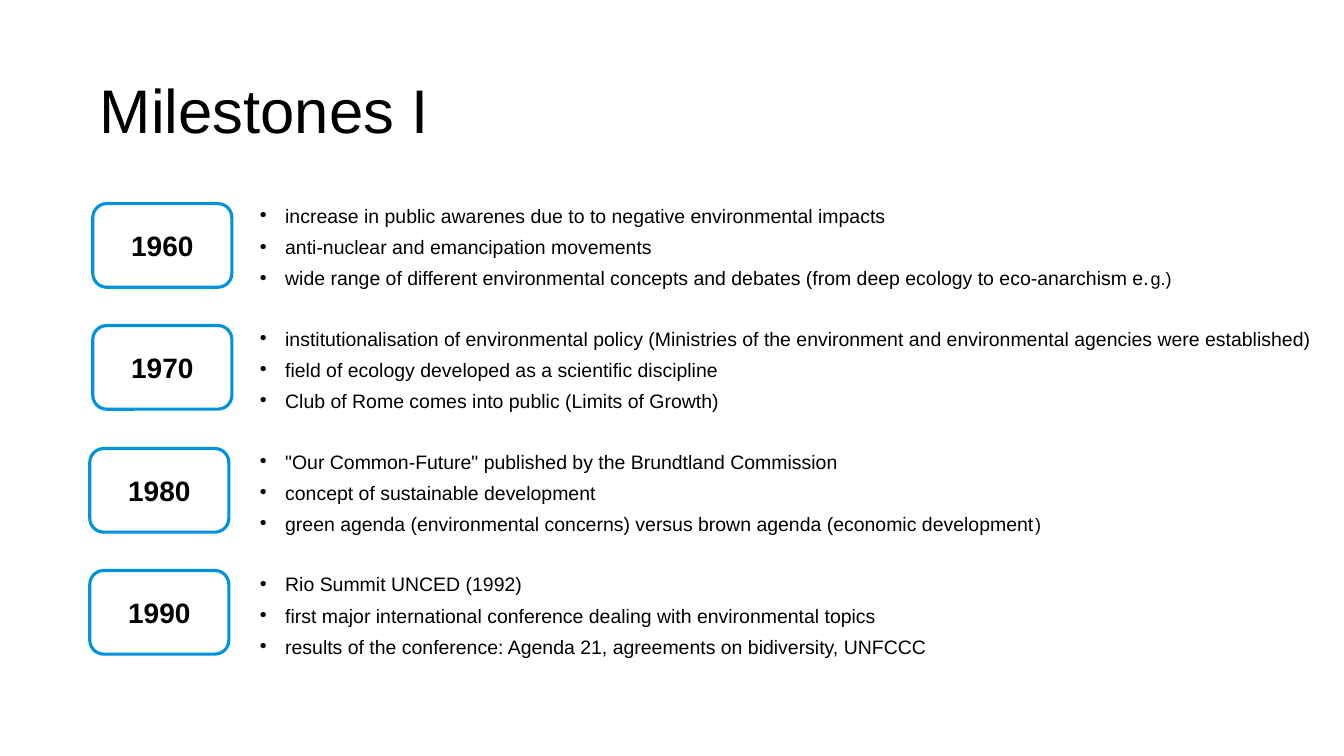
from dataclasses import dataclass

from lxml.etree import SubElement
from pptx import Presentation
from pptx.dml.color import RGBColor
from pptx.enum.shapes import MSO_SHAPE
from pptx.enum.text import MSO_ANCHOR, MSO_AUTO_SIZE, PP_ALIGN
from pptx.oxml.ns import qn
from pptx.slide import Slide
from pptx.text.text import Font, _Paragraph
from pptx.util import Inches, Pt


@dataclass(frozen=True)
class Theme:
    font: str = "Arial"
    text: RGBColor = RGBColor(0x00, 0x00, 0x00)
    accent: RGBColor = RGBColor(0x00, 0x93, 0xDD)
    title_size: float = 44
    year_size: float = 20
    event_size: float = 13.9
    ending_size: float = 12.9
    outline: float = 2.25
    event_gap: float = 10.5
    decade_gap: float = 31.7


@dataclass(frozen=True)
class Event:
    text: str
    ending: str = ""  # closing characters in the smaller size


@dataclass(frozen=True)
class Decade:
    year: str
    left: float
    events: tuple[Event, ...]


THEME = Theme()
FIRST_YEAR_TOP = 2.02
YEAR_PITCH = 1.214

DECADES = (
    Decade("1960", 0.92, (
        Event("increase in public awarenes due to to negative environmental impacts"),
        Event("anti-nuclear and emancipation movements"),
        Event("wide range of different environmental concepts and debates "
              "(from deep ecology to eco-anarchism e.", "g.)"),
    )),
    Decade("1970", 0.92, (
        Event("institutionalisation of environmental policy (Ministries of the "
              "environment and environmental agencies were established)"),
        Event("field of ecology developed as a scientific discipline"),
        Event("Club of Rome comes into public (Limits of Growth)"),
    )),
    Decade("1980", 0.89, (
        Event('"Our Common-Future" published by the Brundtland Commission'),
        Event("concept of sustainable development"),
        Event("green agenda (environmental concerns) versus brown agenda "
              "(economic development", ")"),
    )),
    Decade("1990", 0.89, (
        Event("Rio Summit UNCED (1992)"),
        Event("first major international conference dealing with environmental topics"),
        Event("results of the conference: Agenda 21, agreements on bidiversity, UNFCCC"),
    )),
)


def style_font(font: Font, size: float, bold: bool = False) -> None:
    font.name = THEME.font
    font.size = Pt(size)
    font.bold = bold
    font.color.rgb = THEME.text


def add_bullet(paragraph: _Paragraph) -> None:
    properties = paragraph._p.get_or_add_pPr()
    properties.set("marL", str(Inches(0.25)))
    properties.set("indent", str(-Inches(0.25)))
    SubElement(properties, qn("a:buFont"), typeface=THEME.font)
    SubElement(properties, qn("a:buChar"), char="•")


def add_title(slide: Slide, text: str) -> None:
    title = slide.shapes.title
    title.left, title.top = Inches(0.89), Inches(0.4)
    title.width, title.height = Inches(10.7), Inches(1.45)
    title.text_frame.text = text
    title.text_frame.vertical_anchor = MSO_ANCHOR.MIDDLE
    heading = title.text_frame.paragraphs[0]
    heading.alignment = PP_ALIGN.LEFT
    heading.line_spacing = 0.9
    style_font(heading.font, THEME.title_size)


def add_year(slide: Slide, decade: Decade, top: float) -> None:
    badge = slide.shapes.add_shape(
        MSO_SHAPE.ROUNDED_RECTANGLE,
        Inches(decade.left), Inches(top), Inches(1.38), Inches(0.83))
    badge.shadow.inherit = False
    badge.fill.background()
    badge.line.color.rgb = THEME.accent
    badge.line.width = Pt(THEME.outline)
    badge.text_frame.text = decade.year
    badge.text_frame.vertical_anchor = MSO_ANCHOR.MIDDLE
    label = badge.text_frame.paragraphs[0]
    label.alignment = PP_ALIGN.CENTER
    style_font(label.font, THEME.year_size, bold=True)


def write_event(paragraph: _Paragraph, event: Event, gap: float) -> None:
    add_bullet(paragraph)
    paragraph.line_spacing = 0.7
    paragraph.space_before = Pt(gap)
    style_font(paragraph.font, THEME.event_size)
    paragraph.add_run().text = event.text
    if event.ending:
        ending = paragraph.add_run()
        ending.text = event.ending
        ending.font.size = Pt(THEME.ending_size)


def add_events(slide: Slide, decades: tuple[Decade, ...]) -> None:
    frame = slide.shapes.add_textbox(
        Inches(2.48), Inches(2.04), Inches(11.52), Inches(4.76)).text_frame
    frame.word_wrap = True
    frame.auto_size = MSO_AUTO_SIZE.NONE
    for row, decade in enumerate(decades):
        for position, event in enumerate(decade.events):
            if row == position == 0:
                paragraph, gap = frame.paragraphs[0], 0
            else:
                paragraph = frame.add_paragraph()
                gap = THEME.event_gap if position else THEME.decade_gap
            write_event(paragraph, event, gap)


def main() -> None:
    presentation = Presentation()
    presentation.slide_width = Inches(13.33)
    presentation.slide_height = Inches(7.5)
    slide = presentation.slides.add_slide(presentation.slide_layouts[5])

    # Heading
    add_title(slide, "Milestones I")

    # Events of all decades, then the year beside each group
    add_events(slide, DECADES)
    for row, decade in enumerate(DECADES):
        add_year(slide, decade, round(FIRST_YEAR_TOP + row * YEAR_PITCH, 2))

    presentation.save("out.pptx")


if __name__ == "__main__":
    main()
